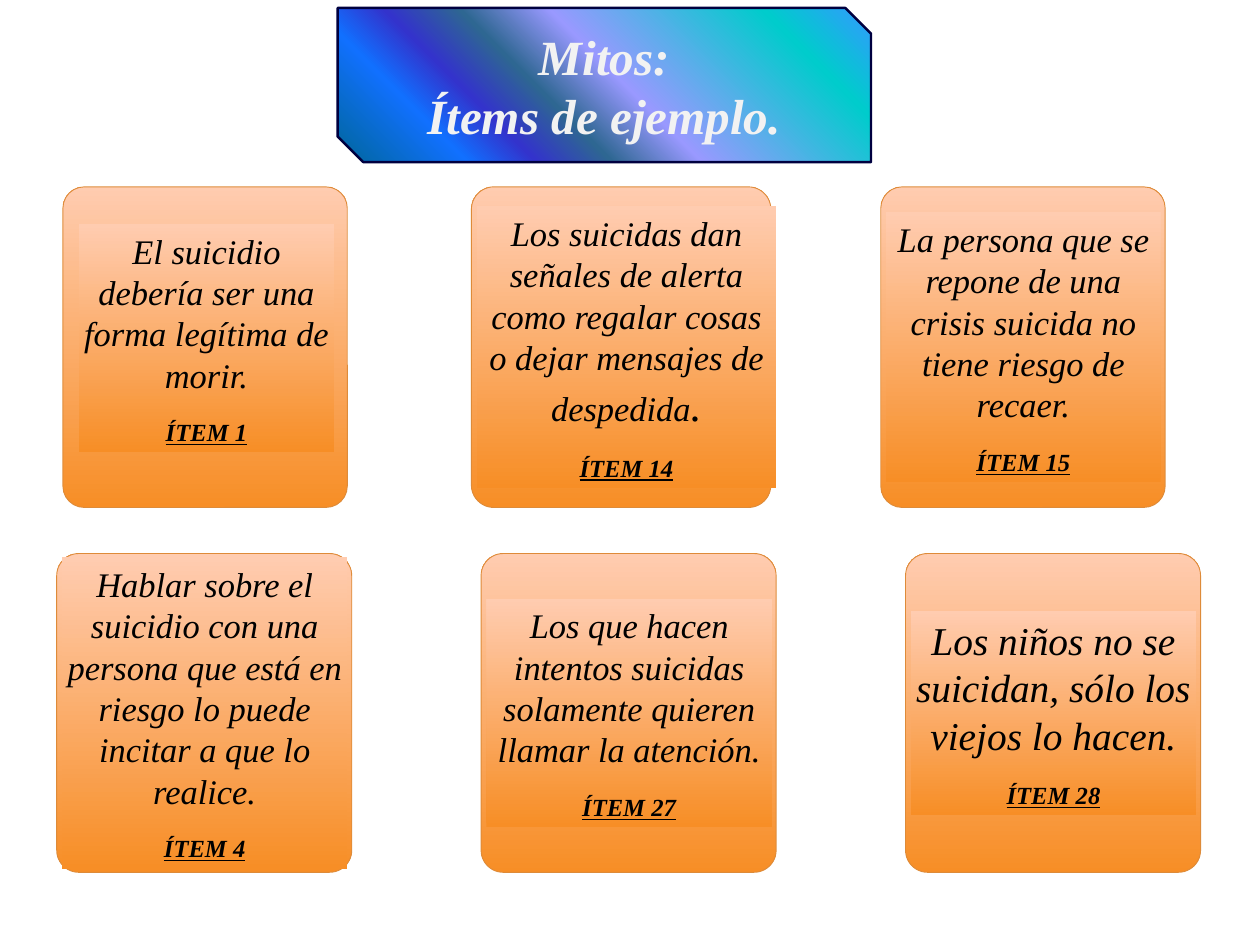
from pptx import Presentation
from pptx.dml.color import RGBColor
from pptx.enum.shapes import MSO_SHAPE as Kind
from pptx.enum.text import MSO_ANCHOR as Anchor, PP_ALIGN as Align
from pptx.oxml.ns import qn
from pptx.util import Inches, Pt
from lxml.etree import SubElement

FONT = "Times New Roman"
TITLE = ["Mitos:", "Ítems de ejemplo."]
BLUES = [(0, "3399FF"), (16, "00CCCC"), (47, "9999FF"), (60, "2E6792"),
         (71, "3333CC"), (81, "1170FF"), (100, "006699")]
ORANGE = [(0, "F78E26"), (100, "FFCCB0")]

# card: left, width; panel: inset, rise, width, height; text size, runs, item
ROWS = [
    (2.11, 3.62, [
        (0.71, 3.21, 0.18, 0.1, 2.88, 2.57, 28,
         ["El suicidio debería ser una forma legítima de morir."], 1),
        (5.32, 3.38, 0.06, 0, 3.38, 3.18, 28,
         ["Los suicidas dan señales de alerta como regalar cosas o dejar "
          "mensajes de despedida", "."], 14),
        (9.94, 3.21, 0.06, 0, 3.1, 3.05, 28,
         ["La persona que se repone de una crisis suicida no tiene riesgo "
          "de recaer."], 15),
    ]),
    (6.25, 3.6, [
        (0.64, 3.33, 0.06, 0, 3.22, 3.52, 28,
         ["Hablar sobre el suicidio con una persona que está en riesgo lo "
          "puede incitar a que lo realice."], 4),
        (5.43, 3.33, 0.06, 0, 3.22, 2.57, 28,
         ["Los que hacen intentos suicidas solamente quieren llamar la "
          "atención."], 27),
        (10.22, 3.33, 0.06, 0, 3.22, 2.31, 32,
         ["Los niños no se suicidan, sólo los viejos lo hacen."], 28),
    ]),
]

deck = Presentation()
deck.slide_width, deck.slide_height = Inches(14.22), Inches(10.67)
slide = deck.slides.add_slide(deck.slide_layouts[6])


def color(code):
    return RGBColor.from_string(code)


def block(kind, box, stops, angle, edge=None, width=0):
    shape = slide.shapes.add_shape(kind, *map(Inches, box))
    shape.shadow.inherit = False
    shape.fill.gradient()
    shape.fill.gradient_angle = angle
    ramp = shape._element.spPr.find(qn("a:gradFill")).find(qn("a:gsLst"))
    for stop in list(ramp):
        ramp.remove(stop)
    for pos, code in stops:
        stop = SubElement(ramp, qn("a:gs"), pos=str(pos * 1000))
        SubElement(stop, qn("a:srgbClr"), val=code)
    if edge:
        shape.line.color.rgb = color(edge)
        shape.line.width = Pt(width)
    else:
        shape.line.fill.background()
    return shape


def frame(shape, pad):
    text = shape.text_frame
    text.word_wrap = True
    text.vertical_anchor = Anchor.MIDDLE
    text.margin_left = text.margin_right = Inches(pad)
    text.margin_top = text.margin_bottom = Inches(pad)
    return text


def style(para, size, code, bold=False, line=False, after=0):
    para.alignment = Align.CENTER
    para.space_after = Pt(after)
    font = para.font
    font.name, font.size, font.color.rgb = FONT, Pt(size), color(code)
    font.italic, font.bold, font.underline = True, bold, line


for top, high, cards in ROWS:
    for left, wide, inset, rise, span, tall, size, runs, item in cards:
        card = block(Kind.ROUNDED_RECTANGLE, (left, top, wide, high),
                     ORANGE, 90, "DE8B39", 0.75)
        card.adjustments[0] = 0.075
        start = top + (high - tall) / 2 - rise
        panel = block(Kind.RECTANGLE, (left + inset, start, span, tall),
                      ORANGE, 90)
        text = frame(panel, 0.05)
        myth = text.paragraphs[0]
        for part in runs:
            run = myth.add_run()
            run.text = part
            if part == ".":
                run.font.size = Pt(36)
        style(myth, size, "000000", after=18)
        label = text.add_paragraph()
        label.text = f"ÍTEM {item}"
        style(label, 20, "000000", True, True, 18)

banner = block(Kind.SNIP_2_DIAG_RECTANGLE, (3.81, 0.09, 6.02, 1.74),
               BLUES, 225, "000040", 2)
text = frame(banner, 0.06)
text.text = "\n".join(TITLE)
for para in text.paragraphs:
    style(para, 40, "F2F2F2", True)

deck.save("out.pptx")
